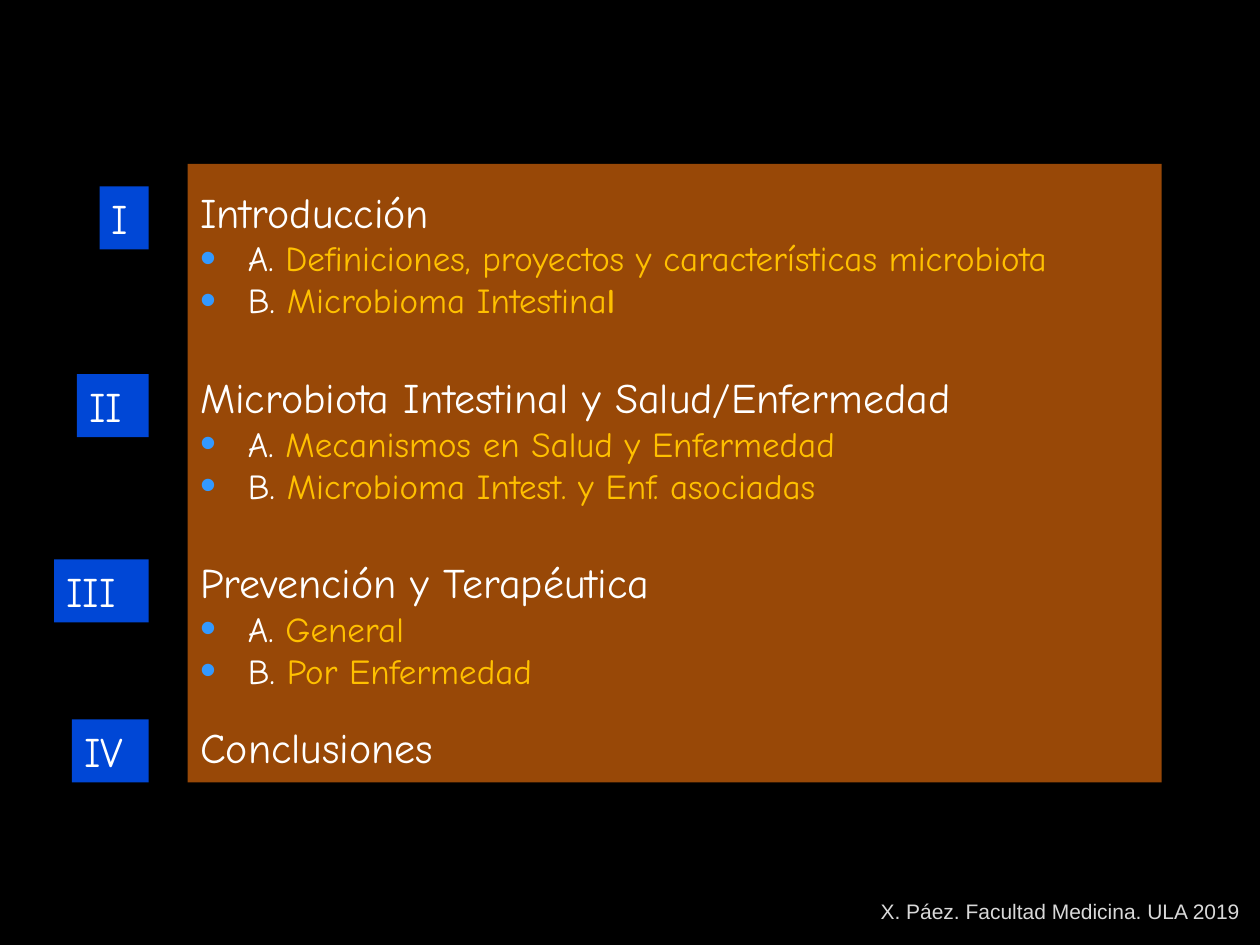
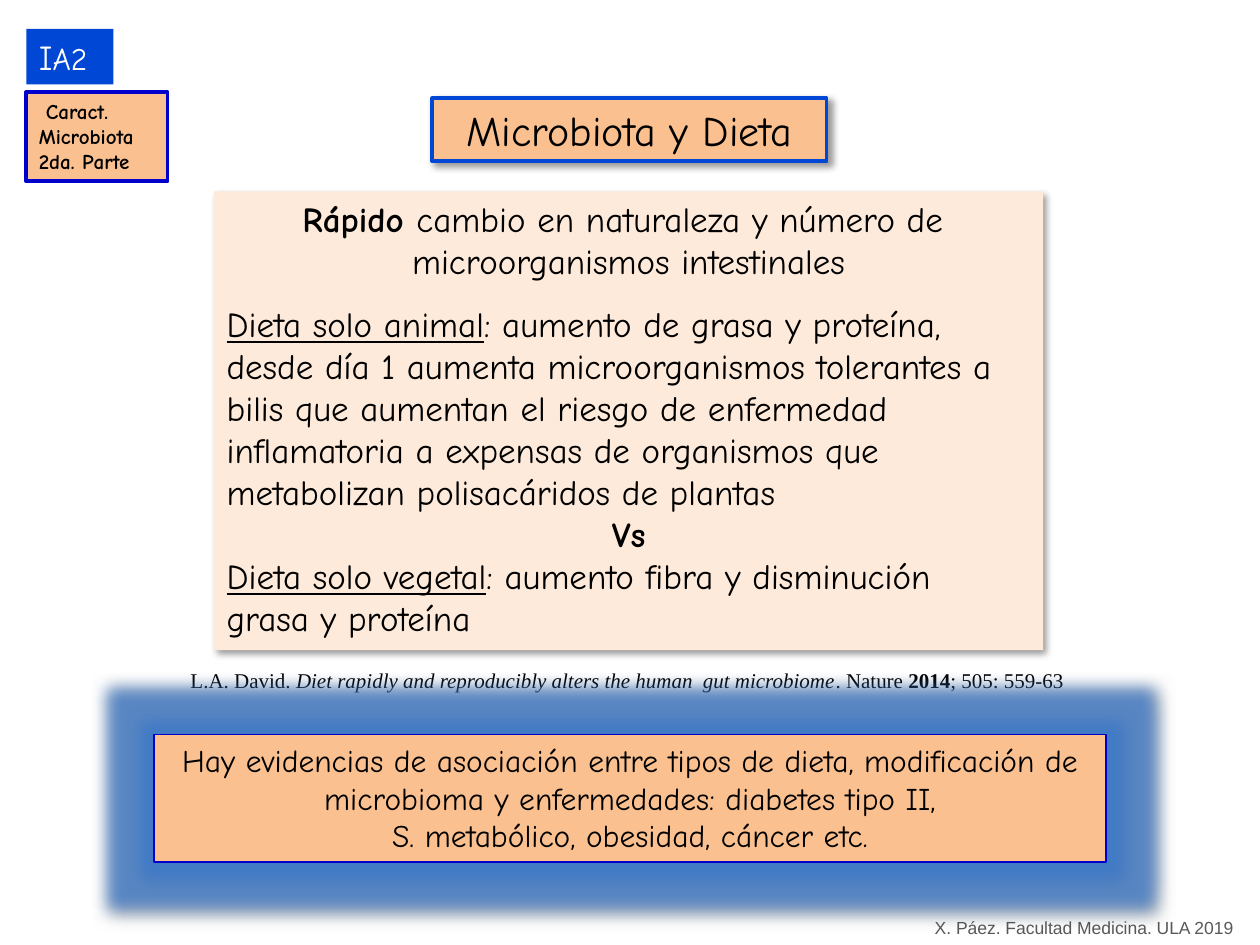
from lxml.etree import SubElement
from pptx import Presentation
from pptx.dml.color import RGBColor
from pptx.enum.shapes import MSO_SHAPE as Preset
from pptx.enum.text import MSO_ANCHOR as Anchor, MSO_AUTO_SIZE as AutoSize, PP_ALIGN as Align
from pptx.oxml.ns import qn
from pptx.util import Inches, Pt

COLORS = {
    "black": "000000", "white": "FFFFFF", "brown": "984807", "gold": "FFC000",
    "blue": "0047D6", "navy": "0000CC", "bullet": "3399FF", "peach": "FAC090",
    "cream": "FDEADA", "glow": "3B78C9", "light_gray": "D9D9D9", "dark_gray": "595959",
}
COMIC, SANS, SERIF = "Comic Neue", "Arial", "Times New Roman"
CREDIT = "X. Páez. Facultad Medicina. ULA 2019"
OUTLINE = [
    ("I", 1.48, 0.39, "Introducción",
     ["Definiciones, proyectos y características microbiota", "Microbioma Intestinal"]),
    ("II", 2.97, 0.57, "Microbiota Intestinal y Salud/Enfermedad",
     ["Mecanismos en Salud y Enfermedad", "Microbioma Intest. y Enf. asociadas"]),
    ("III", 4.44, 0.75, "Prevención y Terapéutica", ["General", "Por Enfermedad"]),
    ("IV", 5.71, 0.61, "Conclusiones", []),
]


def rgb(name):
    """Return a palette colour."""
    return RGBColor.from_string(COLORS[name])


def add_run(paragraph, text, size, color="black", font=COMIC, **style):
    """Append one formatted run; style takes bold, italic and underline."""
    run = paragraph.add_run()
    run.text = text
    run.font.size, run.font.name = Pt(size), font
    run.font.color.rgb = rgb(color)
    for attribute, value in style.items():
        setattr(run.font, attribute, value)


def add_lines(frame, lines, size, color="black", font=COMIC, align=Align.LEFT):
    """Write lines of (text, style) runs into a frame, one paragraph each."""
    for index, runs in enumerate(lines):
        paragraph = frame.paragraphs[0] if index == 0 else frame.add_paragraph()
        paragraph.alignment = align
        for text, style in runs:
            add_run(paragraph, text, **{"size": size, "color": color, "font": font, **style})


def prepare_frame(shape, wrap=True):
    """Set top-anchored text with the usual insets."""
    frame = shape.text_frame
    frame.word_wrap, frame.auto_size = wrap, AutoSize.NONE
    frame.vertical_anchor = Anchor.TOP
    frame.margin_left = frame.margin_right = Inches(0.1)
    frame.margin_top = frame.margin_bottom = Inches(0.05)
    return frame


def add_effect(effects, tag, color, alpha, **attributes):
    """Append a glow or shadow with its colour and opacity in percent."""
    effect = SubElement(effects, qn(tag), {key: str(value) for key, value in attributes.items()})
    tint = SubElement(effect, qn("a:srgbClr"), val=COLORS[color])
    SubElement(tint, qn("a:alpha"), val=str(alpha * 1000))


def style_panel(panel, fill, line=None, line_width=0, shadow=False, glow=False):
    """Fill and outline a panel, with its optional glow and shadow."""
    panel.fill.solid()
    panel.fill.fore_color.rgb = rgb(fill)
    if line:
        panel.line.color.rgb = rgb(line)
        panel.line.width = Pt(line_width)
    else:
        panel.line.fill.background()
    panel.shadow.inherit = False
    effects = panel.element.spPr.find(qn("a:effectLst"))
    if glow:
        add_effect(effects, "a:glow", "glow", 75, rad=Pt(18))
    if shadow:
        add_effect(effects, "a:outerShdw", "black", 40, blurRad=Pt(4), dist=Pt(3),
                   dir=45 * 60000, algn="tl", rotWithShape=0)


def add_panel(slide, box, fill, wrap=True, **style):
    """Add a rectangle and return its text frame."""
    panel = slide.shapes.add_shape(Preset.RECTANGLE, *map(Inches, box))
    style_panel(panel, fill, **style)
    return prepare_frame(panel, wrap)


def add_note(slide, box, runs, size, color, font, align=Align.LEFT):
    """Add one unwrapped line of small text."""
    note = slide.shapes.add_textbox(*map(Inches, box))
    add_lines(prepare_frame(note, wrap=False), [runs], size, color, font, align)


def start_slide(prs, layout, background):
    """Add a slide with a plain background."""
    slide = prs.slides.add_slide(prs.slide_layouts[layout])
    slide.background.fill.solid()
    slide.background.fill.fore_color.rgb = rgb(background)
    return slide


def add_topic(paragraph, letter, topic):
    """Write one bulleted topic of the outline."""
    properties = paragraph._p.get_or_add_pPr()
    properties.set("marL", str(Inches(0.38)))
    properties.set("indent", str(-Inches(0.38)))
    SubElement(SubElement(properties, qn("a:buClr")), qn("a:srgbClr"), val=COLORS["bullet"])
    SubElement(properties, qn("a:buSzPct"), val="130000")
    SubElement(properties, qn("a:buFont"), typeface=SANS)
    SubElement(properties, qn("a:buChar"), char="•")
    add_run(paragraph, f"{letter}. ", 20, "white")
    if topic == "Microbioma Intestinal":
        add_run(paragraph, topic[:-1], 20, "gold")
        add_run(paragraph, topic[-1], 20, "gold", bold=True)
    else:
        add_run(paragraph, topic, 20, "gold")


def add_outline(slide, box):
    """Fill the panel with sections and set their numerals to its left."""
    frame = add_panel(slide, box, "brown")
    frame.margin_top = Inches(0.18)
    numeral_right = box[0] - 0.31
    for index, (numeral, top, width, heading, topics) in enumerate(OUTLINE):
        paragraph = frame.paragraphs[0] if index == 0 else frame.add_paragraph()
        paragraph.alignment = Align.LEFT
        if index:
            paragraph.space_before = Pt(29 if topics else 17)
        add_run(paragraph, heading, 24, "white")
        for letter, topic in zip("AB", topics):
            paragraph = frame.add_paragraph()
            paragraph.alignment = Align.LEFT
            add_topic(paragraph, letter, topic)
        badge = add_panel(slide, (numeral_right - width, top, width, 0.5), "blue", wrap=False)
        add_lines(badge, [[(numeral, {})]], 24, "white")


def add_section_tag(slide, left, top):
    """Stack the section code over the section name."""
    code = add_panel(slide, (left, top, 0.69, 0.44), "blue")
    add_lines(code, [[("I", {}), ("A2", {"size": 18})]], 20, "white")
    section = add_panel(slide, (left, top + 0.5, 1.12, 0.71), "peach", line="navy", line_width=2.25)
    bold = {"bold": True}
    add_lines(section, [[(" ", {}), ("Caract.", bold)], [("Microbiota", bold)],
                        [("2da. Parte", bold)]], 12)


def add_title(slide, box, text):
    """Place and format the title placeholder."""
    title = slide.shapes.title
    title.left, title.top, title.width, title.height = map(Inches, box)
    style_panel(title, "peach", line="blue", line_width=2.25, shadow=True)
    add_lines(prepare_frame(title, wrap=False), [[(text, {})]], 24, align=Align.CENTER)


def add_diets(slide, box):
    """Compare the two diets in the main panel."""
    frame = add_panel(slide, box, "cream", shadow=True)
    bold, underline = {"bold": True}, {"underline": True}
    add_lines(frame, [
        [("Rápido ", bold), ("cambio en naturaleza y número de ", {})],
        [("microorganismos intestinales", {})],
        [("Dieta solo animal", underline), (": aumento de grasa y proteína,", {})],
        [("desde día 1 aumenta microorganismos tolerantes a bilis que aumentan el riesgo de "
          "enfermedad inflamatoria a expensas de organismos que metabolizan polisacáridos "
          "de plantas", {})],
        [("Vs", bold)],
        [("Dieta solo vegetal", underline), (": aumento fibra y disminución", {})],
        [("grasa y proteína", {})],
    ], 20)
    for centered in (0, 1, 4):
        frame.paragraphs[centered].alignment = Align.CENTER
    frame.paragraphs[2].space_before = Pt(12)


def add_conclusion(slide, box):
    """State the evidence in a glowing panel."""
    frame = add_panel(slide, box, "peach", line="navy", line_width=1, shadow=True, glow=True)
    add_lines(frame, [
        [("Hay evidencias de asociación entre tipos de dieta, modificación de microbioma y "
          "enfermedades: diabetes tipo II,", {})],
        [("S. metabólico, obesidad, cáncer etc.", {})],
    ], 18, align=Align.CENTER)


def build_outline_slide(prs):
    """Build the outline slide."""
    slide = start_slide(prs, 6, "black")
    add_note(slide, (6.89, 7.08, 3.08, 0.3), [(CREDIT, {})], 12, "light_gray", SANS)
    add_outline(slide, (1.49, 1.3, 7.73, 4.91))


def build_diet_slide(prs):
    """Build the slide on microbiota and diet."""
    slide = start_slide(prs, 5, "white")
    add_title(slide, (3.43, 0.78, 3.13, 0.5), "Microbiota y Dieta")
    add_diets(slide, (1.7, 1.52, 6.58, 3.64))
    add_note(slide, (1.33, 5.25, 7.21, 0.3), [
        ("L.A. David. ", {}),
        ("Diet rapidly and reproducibly alters the human  gut microbiome", {"italic": True}),
        (". Nature ", {}), ("2014", {"bold": True}), ("; 505: 559-63", {}),
    ], 12, "black", SERIF, Align.RIGHT)
    add_note(slide, (7.32, 7.23, 2.59, 0.27), [(CREDIT, {})], 10, "dark_gray", SANS)
    add_conclusion(slide, (1.22, 5.83, 7.56, 1.01))
    add_section_tag(slide, 0.21, 0.23)


def main():
    """Build and save the presentation."""
    prs = Presentation()
    prs.slide_width, prs.slide_height = Inches(10), Inches(7.5)
    build_outline_slide(prs)
    build_diet_slide(prs)
    prs.save("out.pptx")


if __name__ == "__main__":
    main()
